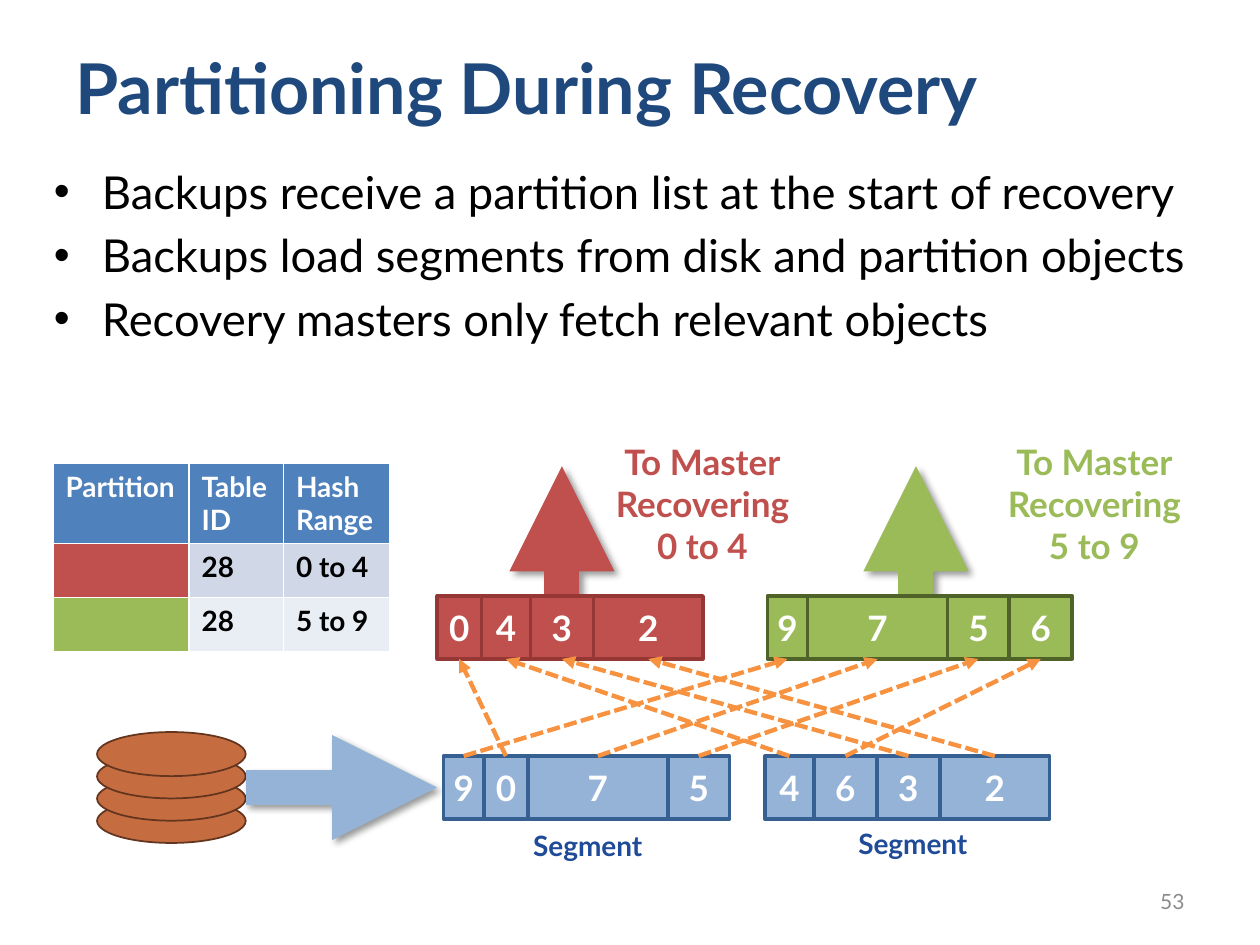
from lxml.etree import SubElement
from pptx import Presentation
from pptx.dml.color import RGBColor
from pptx.enum.dml import MSO_LINE
from pptx.enum.shapes import MSO_CONNECTOR, MSO_SHAPE
from pptx.enum.text import MSO_ANCHOR, MSO_AUTO_SIZE, PP_ALIGN
from pptx.oxml.ns import qn
from pptx.util import Inches, Pt

FONT = "Lato"
WHITE = RGBColor(0xFF, 0xFF, 0xFF)
BLACK = RGBColor(0x00, 0x00, 0x00)
GRAY = RGBColor(0x8C, 0x8C, 0x8C)
NAVY = RGBColor(0x1F, 0x49, 0x7D)
LABEL_BLUE = RGBColor(0x20, 0x4B, 0x98)
HEADER_BLUE = RGBColor(0x4F, 0x81, 0xBD)
BAND_DARK = RGBColor(0xD0, 0xD8, 0xE8)
BAND_LIGHT = RGBColor(0xE9, 0xED, 0xF4)
BLUE = RGBColor(0x95, 0xB3, 0xD7)
BLUE_EDGE = RGBColor(0x37, 0x60, 0x92)
RED = RGBColor(0xC0, 0x50, 0x4D)
RED_EDGE = RGBColor(0x95, 0x37, 0x34)
GREEN = RGBColor(0x9B, 0xBB, 0x59)
GREEN_EDGE = RGBColor(0x4F, 0x62, 0x28)
ORANGE = RGBColor(0xF6, 0x92, 0x40)
COPPER = RGBColor(0xC5, 0x6D, 0x41)
COPPER_EDGE = RGBColor(0x64, 0x35, 0x1E)

# Each object keeps its width wherever it is stored
OBJECT_WIDTHS = {"9": 0.32, "0": 0.35, "7": 1.11, "5": 0.49,
                 "4": 0.39, "6": 0.5, "3": 0.5, "2": 0.87}
BLOCK_HEIGHT = 0.5


def write_lines(text_frame, lines, size, color, bold=False, align=PP_ALIGN.LEFT):
    for index, line in enumerate(lines):
        paragraph = text_frame.paragraphs[0] if index == 0 else text_frame.add_paragraph()
        paragraph.alignment = align
        run = paragraph.add_run()
        run.text = line
        run.font.name = FONT
        run.font.size = Pt(size)
        run.font.bold = bold
        run.font.color.rgb = color


def add_text(slide, box, lines, size, color, wrap=False, **style):
    text_frame = slide.shapes.add_textbox(*map(Inches, box)).text_frame
    text_frame.word_wrap = wrap
    write_lines(text_frame, lines, size, color, **style)
    return text_frame


def add_filled(shapes, kind, box, fill, edge, edge_width):
    shape = shapes.add_shape(kind, *map(Inches, box))
    shape.shadow.inherit = False
    shape.fill.solid()
    shape.fill.fore_color.rgb = fill
    shape.line.color.rgb = edge
    shape.line.width = Pt(edge_width)
    return shape


def add_arrow(slide, start, end, color, width, dash=None, shadow=False):
    arrow = slide.shapes.add_connector(
        MSO_CONNECTOR.STRAIGHT, *map(Inches, (*start, *end)))
    arrow.line.color.rgb = color
    arrow.line.width = Pt(width)
    if dash:
        arrow.line.dash_style = dash
    properties = arrow.element.spPr
    SubElement(properties.find(qn("a:ln")), qn("a:tailEnd"), type="triangle")
    effects = SubElement(properties, qn("a:effectLst"))
    if shadow:
        outer = SubElement(effects, qn("a:outerShdw"), blurRad=str(Pt(4)),
                           dist=str(Pt(3)), dir="2700000", rotWithShape="0")
        black = SubElement(outer, qn("a:srgbClr"), val="000000")
        SubElement(black, qn("a:alpha"), val="40000")
    return arrow


def add_title(slide, box):
    title = slide.shapes.title
    title.left, title.top, title.width, title.height = map(Inches, box)
    text_frame = title.text_frame
    text_frame.auto_size = MSO_AUTO_SIZE.NONE
    text_frame.vertical_anchor = MSO_ANCHOR.MIDDLE
    write_lines(text_frame, ["Partitioning During Recovery"], 40, NAVY, bold=True)


def add_bullets(slide, box, lines):
    text_frame = add_text(slide, box, lines, 25.9, BLACK, wrap=True)
    for paragraph in text_frame.paragraphs:
        paragraph.space_before = Pt(5.2)
        properties = paragraph._p.get_or_add_pPr()
        properties.set("marL", str(Inches(0.38)))
        properties.set("indent", str(Inches(-0.38)))
        SubElement(properties, qn("a:buFont"), typeface="Arial")
        SubElement(properties, qn("a:buChar"), char="•")


def add_partition_table(slide, box):
    rows = [[["Partition"], ["Table", "ID"], ["Hash Range"]],
            [[], ["28"], ["0 to 4"]],
            [[], ["28"], ["5 to 9"]]]
    fills = [[HEADER_BLUE] * 3,
             [RED, BAND_DARK, BAND_DARK],
             [GREEN, BAND_LIGHT, BAND_LIGHT]]
    table = slide.shapes.add_table(3, 3, *map(Inches, box)).table
    for column, width in zip(table.columns, (1.08, 0.75, 0.84)):
        column.width = Inches(width)
    for row, height in zip(table.rows, (0.63, 0.43, 0.43)):
        row.height = Inches(height)
    for row_index, row in enumerate(rows):
        for column_index, lines in enumerate(row):
            cell = table.cell(row_index, column_index)
            cell.fill.solid()
            cell.fill.fore_color.rgb = fills[row_index][column_index]
            write_lines(cell.text_frame, lines, 16,
                        BLACK if row_index else WHITE, bold=True)


def add_disk(slide, box):
    left, top, width, height = box
    platter_height = 0.35
    step = (height - platter_height) / 3
    group = slide.shapes.add_group_shape()
    for level in reversed(range(4)):
        add_filled(group.shapes, MSO_SHAPE.OVAL,
                   (left, top + level * step, width, platter_height),
                   COPPER, COPPER_EDGE, 1)


def add_object_row(slide, left, top, keys, fill, edge):
    """Place the objects side by side and return their blocks by key."""
    group = slide.shapes.add_group_shape()
    blocks = {}
    for key in keys:
        width = OBJECT_WIDTHS[key]
        block = add_filled(group.shapes, MSO_SHAPE.RECTANGLE,
                           (left, top, width, BLOCK_HEIGHT), fill, edge, 2)
        text_frame = block.text_frame
        text_frame.margin_left = text_frame.margin_right = 0
        text_frame.vertical_anchor = MSO_ANCHOR.MIDDLE
        write_lines(text_frame, [key], 20, WHITE, bold=True, align=PP_ALIGN.CENTER)
        blocks[key] = block
        left += width
    return blocks


def add_object_links(slide, sources, targets):
    for key, source in sources.items():
        link = add_arrow(slide, (0, 0), (1, 1), ORANGE, 2.5, dash=MSO_LINE.SQUARE_DOT)
        link.begin_connect(source, 0)
        link.end_connect(targets[key], 2)


def main():
    presentation = Presentation()
    presentation.slide_width, presentation.slide_height = Inches(10), Inches(7.5)
    slide = presentation.slides.add_slide(presentation.slide_layouts[5])

    # Heading and bullets
    add_title(slide, (0.5, 0.3, 9, 0.78))
    add_bullets(slide, (0.33, 1.25, 9.22, 2.09), [
        "Backups receive a partition list at the start of recovery",
        "Backups load segments from disk and partition objects",
        "Recovery masters only fetch relevant objects"])

    # Partition list and disk
    add_partition_table(slide, (0.42, 3.68, 2.67, 1.49))
    add_disk(slide, (0.77, 5.81, 1.18, 0.88))
    add_arrow(slide, (1.95, 6.25), (3.47, 6.25), BLUE, 20, shadow=True)

    # Segments loaded from disk
    segments = {}
    for left, keys, label_box in ((3.52, "9075", (4.09, 6.53, 1.15, 0.37)),
                                  (6.07, "4632", (6.67, 6.51, 1.15, 0.37))):
        segments.update(add_object_row(slide, left, 6, keys, BLUE, BLUE_EDGE))
        add_text(slide, label_box, ["Segment"], 16, LABEL_BLUE,
                 bold=True, align=PP_ALIGN.CENTER)

    # Partitions sent to the recovery masters
    partitions = {}
    for left, keys, fill, edge, arrow_x, label_left, hash_range in (
            (3.47, "0432", RED, RED_EDGE, 4.46, 4.78, "0 to 4"),
            (6.09, "9756", GREEN, GREEN_EDGE, 7.27, 7.89, "5 to 9")):
        arrow = add_arrow(slide, (arrow_x, 4.73), (arrow_x, 3.7), fill, 20, shadow=True)
        partitions.update(add_object_row(slide, left, 4.73, keys, fill, edge))
        if fill == RED:
            arrow.begin_connect(partitions["3"], 0)
        add_text(slide, (label_left, 3.45, 1.59, 1.11),
                 ["To Master", "Recovering", hash_range], 20, fill,
                 bold=True, align=PP_ALIGN.CENTER)
    add_object_links(slide, segments, partitions)

    # Slide number
    number = add_text(slide, (7.17, 6.95, 2.33, 0.4), ["53"], 12, GRAY,
                      wrap=True, align=PP_ALIGN.RIGHT)
    number.vertical_anchor = MSO_ANCHOR.MIDDLE

    presentation.save("out.pptx")


if __name__ == "__main__":
    main()
